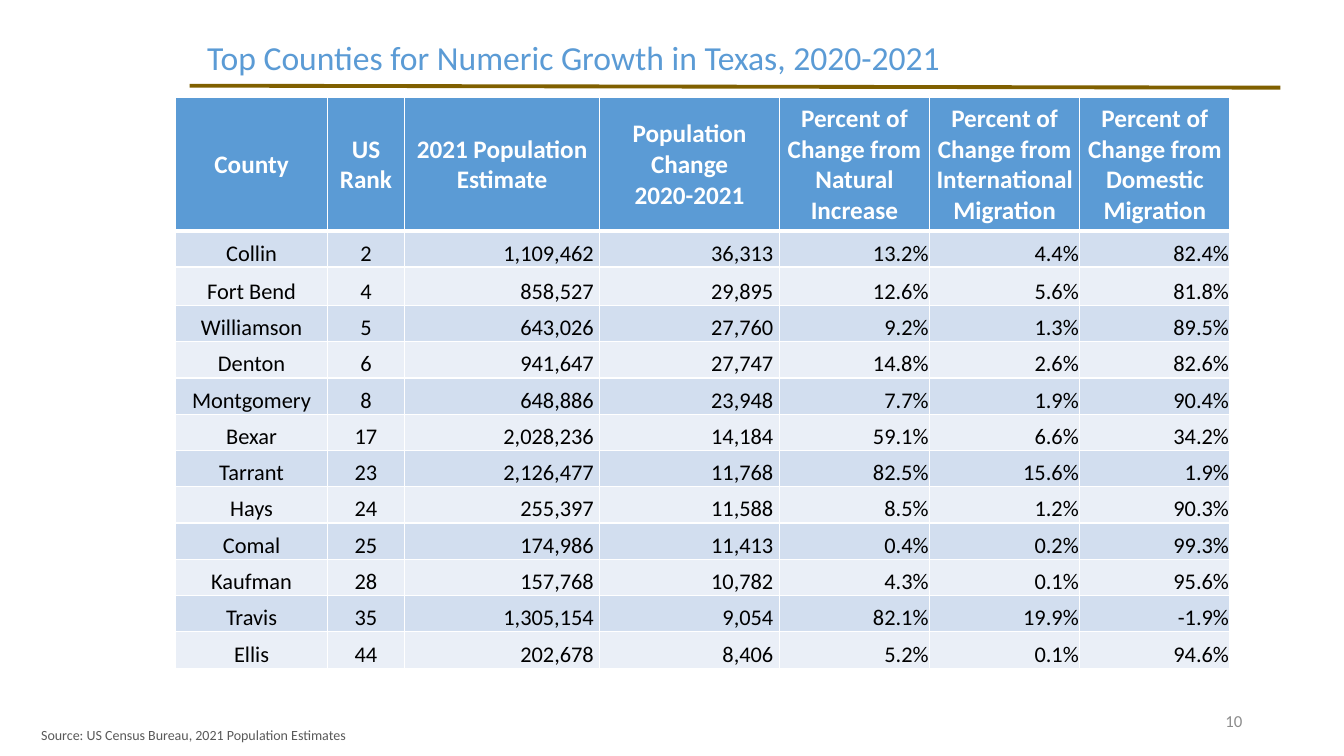
from dataclasses import dataclass

from lxml.etree import SubElement
from pptx import Presentation
from pptx.dml.color import RGBColor as RGB
from pptx.enum.shapes import MSO_CONNECTOR as CONN
from pptx.enum.text import MSO_ANCHOR as ANCHOR, MSO_AUTO_SIZE as AUTO, PP_ALIGN as ALIGN
from pptx.oxml.ns import qn
from pptx.util import Inches, Pt

# Content
TITLE = "Top Counties for Numeric Growth in Texas, 2020-2021"
SOURCE = "Source: US Census Bureau, 2021 Population Estimates"
PAGE = "10"
HEADERS = (
    "County",
    "US Rank",
    "2021 Population Estimate",
    "Population Change\n2020-2021",
    "Percent of Change from Natural Increase",
    "Percent of Change from\nInternational Migration",
    "Percent of Change from Domestic Migration",
)
# County, rank, population, change, then % natural, international, domestic
COUNTIES = (
    ("Collin", 2, 1109462, 36313, 13.2, 4.4, 82.4),
    ("Fort Bend", 4, 858527, 29895, 12.6, 5.6, 81.8),
    ("Williamson", 5, 643026, 27760, 9.2, 1.3, 89.5),
    ("Denton", 6, 941647, 27747, 14.8, 2.6, 82.6),
    ("Montgomery", 8, 648886, 23948, 7.7, 1.9, 90.4),
    ("Bexar", 17, 2028236, 14184, 59.1, 6.6, 34.2),
    ("Tarrant", 23, 2126477, 11768, 82.5, 15.6, 1.9),
    ("Hays", 24, 255397, 11588, 8.5, 1.2, 90.3),
    ("Comal", 25, 174986, 11413, 0.4, 0.2, 99.3),
    ("Kaufman", 28, 157768, 10782, 4.3, 0.1, 95.6),
    ("Travis", 35, 1305154, 9054, 82.1, 19.9, -1.9),
    ("Ellis", 44, 202678, 8406, 5.2, 0.1, 94.6),
)

# Column rules: width, number format, alignment, right margin
COLUMNS = (
    (1.51, "{}", ALIGN.CENTER, 0.01),
    (0.76, "{}", ALIGN.CENTER, 0.01),
    (1.94, "{:,}", ALIGN.RIGHT, 0.06),
    (1.78, "{:,}", ALIGN.RIGHT, 0.06),
) + ((1.49, "{:.1f}%", ALIGN.RIGHT, 0.01),) * 3
HEADER_H, ROW_H, TALL_ROW_H = 1.32, 0.36, 0.38


@dataclass(frozen=True)
class Theme:
    font: str = "Calibri"
    accent: str = "5B9BD5"
    rule: str = "806000"
    bands: tuple = ("D2DEEF", "EAEFF7")
    white: str = "FFFFFF"
    ink: str = "000000"
    source: str = "595959"
    page: str = "8C8C8C"
    title_size: int = 24
    header_size: int = 18
    body_size: int = 16
    page_size: int = 12
    source_size: int = 10


T = Theme()


def write(tf, text, size, color, align, bold=False):
    tf.text = text
    for p in tf.paragraphs:
        p.alignment = align
        f = p.font
        f.name, f.size, f.bold = T.font, Pt(size), bold
        f.color.rgb = RGB.from_string(color)


def place(sp, left, top, width, height):
    sp.left, sp.top = Inches(left), Inches(top)
    sp.width, sp.height = Inches(width), Inches(height)


def add_text(slide, box, text, size, color, align, anchor=ANCHOR.TOP):
    tf = slide.shapes.add_textbox(*map(Inches, box)).text_frame
    tf.word_wrap = True
    tf.vertical_anchor = anchor
    write(tf, text, size, color, align)
    return tf


def set_borders(cell, bottom):
    tc_pr = cell._tc.get_or_add_tcPr()
    for side, width in (("L", 1), ("R", 1), ("T", 1), ("B", bottom)):
        ln = SubElement(tc_pr, qn(f"a:ln{side}"), w=str(Pt(width)))
        SubElement(SubElement(ln, qn("a:solidFill")), qn("a:srgbClr"), val=T.white)


def fill_cell(cell, text, size, color, align, anchor, fill, right, header):
    cell.margin_left = cell.margin_top = Inches(0.01)
    cell.margin_right, cell.margin_bottom = Inches(right), 0
    cell.vertical_anchor = anchor
    write(cell.text_frame, text, size, color, align, header)
    set_borders(cell, 3 if header else 1)
    cell.fill.solid()
    cell.fill.fore_color.rgb = RGB.from_string(fill)


def add_county_table(slide):
    heights = [HEADER_H] + [ROW_H] * len(COUNTIES)
    heights[2] = TALL_ROW_H
    widths = [c[0] for c in COLUMNS]
    table = slide.shapes.add_table(
        len(heights), len(widths), Inches(1.74), Inches(0.97),
        Inches(sum(widths)), Inches(sum(heights))).table
    for row, h in zip(table.rows, heights):
        row.height = Inches(h)
    for c, (width, fmt, align, right) in enumerate(COLUMNS):
        table.columns[c].width = Inches(width)
        fill_cell(table.cell(0, c), HEADERS[c], T.header_size, T.white,
                  ALIGN.CENTER, ANCHOR.MIDDLE, T.accent, 0.01, True)
        for r, county in enumerate(COUNTIES):
            fill_cell(table.cell(r + 1, c), fmt.format(county[c]), T.body_size, T.ink,
                      align, ANCHOR.BOTTOM, T.bands[r % 2], right, False)


def main():
    prs = Presentation()
    prs.slide_width, prs.slide_height = Inches(13.33), Inches(7.5)
    slide = prs.slides.add_slide(prs.slide_layouts[5])

    # Title and the rule below it
    title = slide.shapes.title
    place(title, 1.85, 0.32, 7.68, 0.5)
    tf = title.text_frame
    tf.auto_size, tf.word_wrap, tf.vertical_anchor = AUTO.NONE, True, ANCHOR.TOP
    write(tf, TITLE, T.title_size, T.accent, ALIGN.CENTER)
    rule = slide.shapes.add_connector(
        CONN.STRAIGHT, Inches(1.88), Inches(0.85), Inches(12.7), Inches(0.87))
    rule.line.color.rgb = RGB.from_string(T.rule)
    rule.line.width = Pt(2.75)
    SubElement(rule._element.spPr, qn("a:effectLst"))

    # County table
    add_county_table(slide)

    # Source and page number
    tf = add_text(slide, (0.31, 7.15, 5, 0.28), SOURCE, T.source_size, T.source, ALIGN.LEFT)
    tf.paragraphs[0].line_spacing = 1.07
    add_text(slide, (9.42, 6.95, 3, 0.4), PAGE, T.page_size, T.page,
             ALIGN.RIGHT, ANCHOR.MIDDLE)

    prs.save("out.pptx")


if __name__ == "__main__":
    main()
